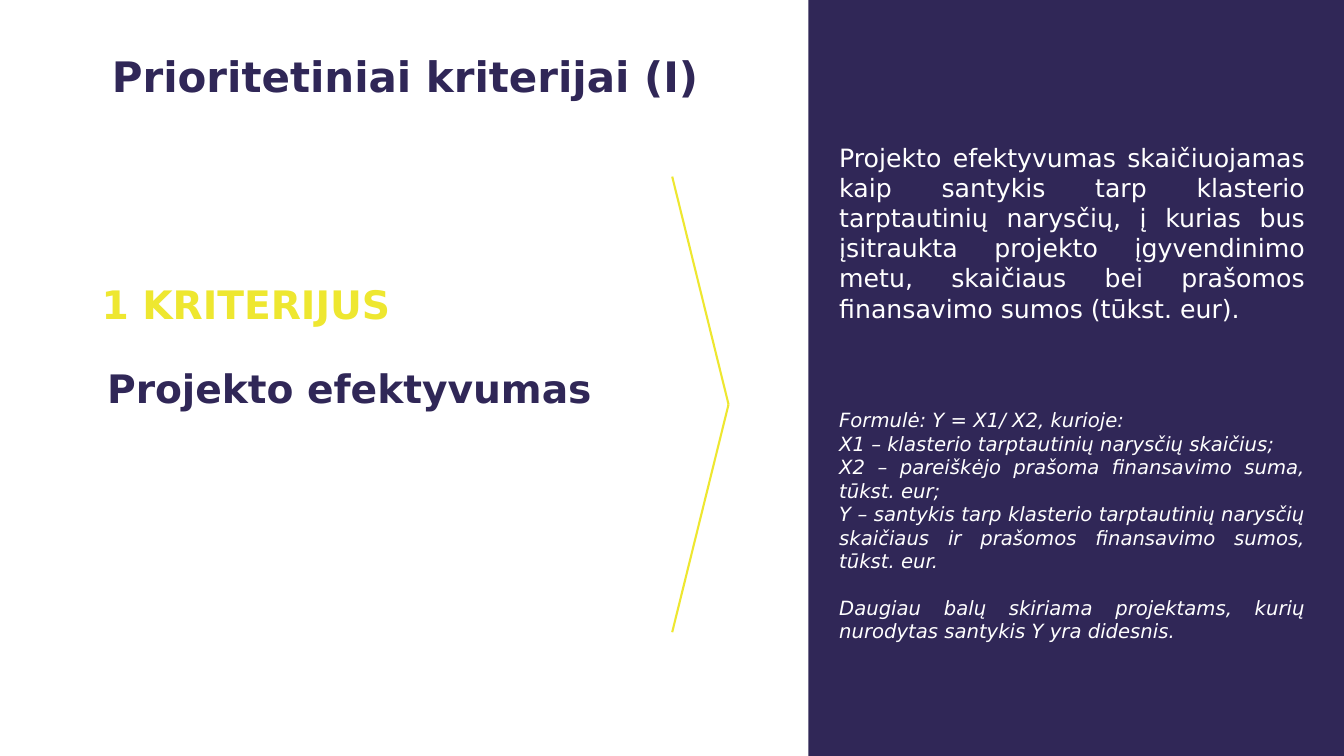
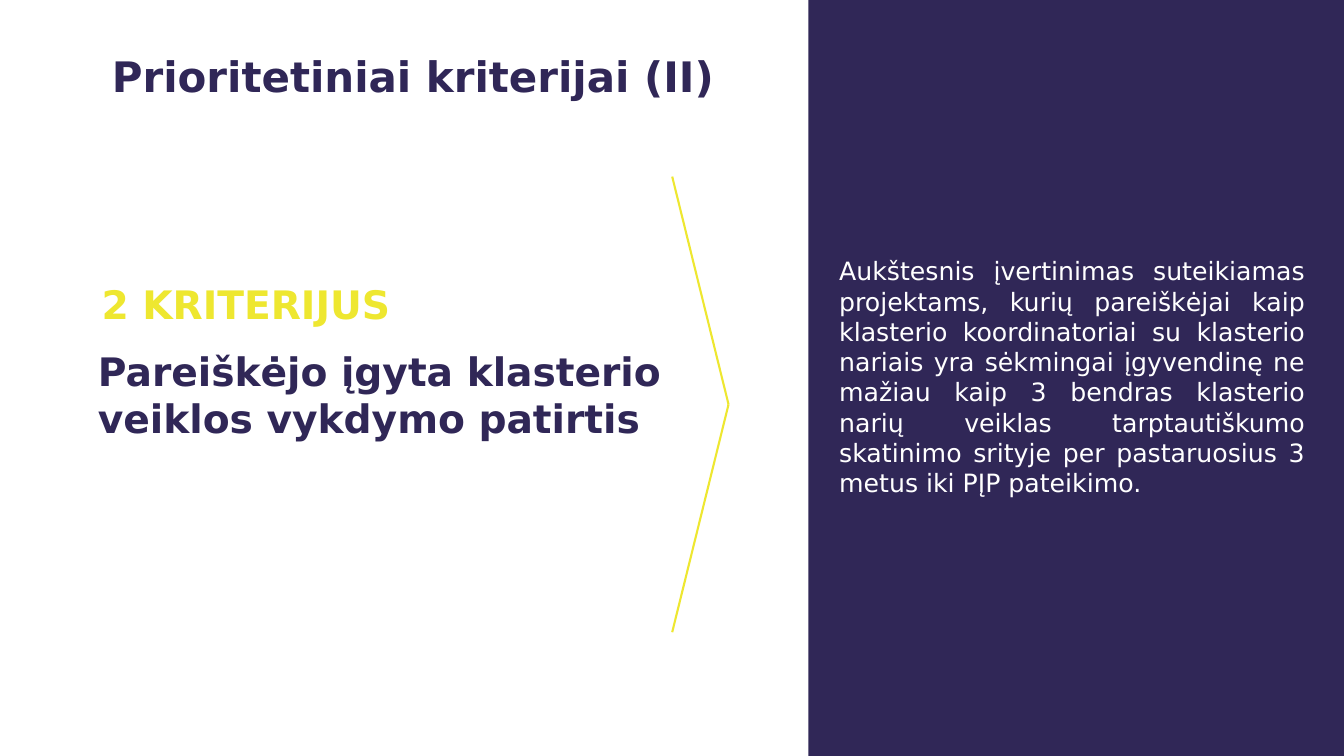
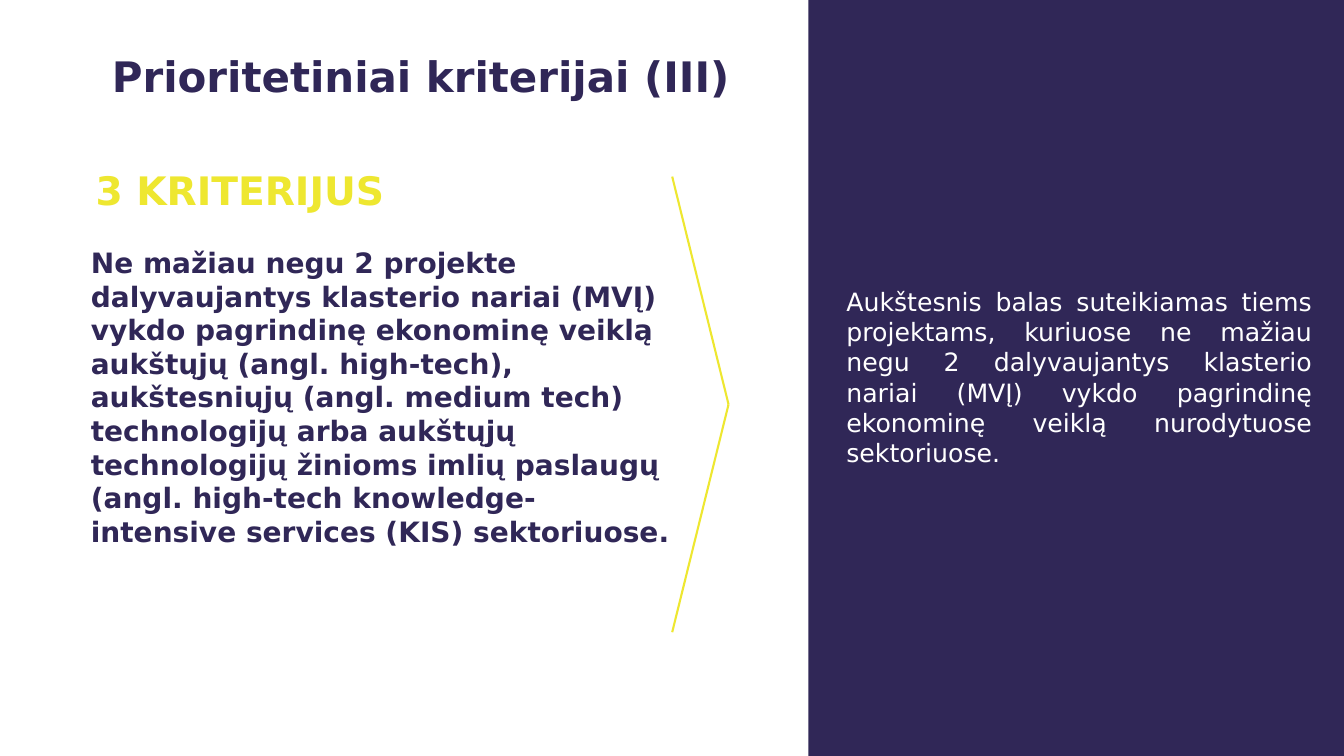
import pptx
import pptx.dml.color
import pptx.enum.shapes
import pptx.enum.text
import pptx.oxml.ns
import pptx.util
from lxml import etree

Cm = pptx.util.Cm
Pt = pptx.util.Pt
Rgb = pptx.dml.color.RGBColor
Anchor = pptx.enum.text.MSO_ANCHOR
Align = pptx.enum.text.PP_ALIGN
Kind = pptx.enum.shapes.MSO_SHAPE
Wire = pptx.enum.shapes.MSO_CONNECTOR


class Theme:
    """Colours, font, type sizes and line width."""
    navy = Rgb.from_string("302757")
    lime = Rgb.from_string("EEE730")
    white = Rgb.from_string("FFFFFF")
    font = "DejaVu Sans"
    title = 30
    head = 28
    claim = 20
    body = 18
    note = 14
    rule = 1.5


class Deck:
    """Holds the style and the current slide."""

    def __init__(self, theme):
        self.theme = theme
        self.prs = pptx.Presentation()
        self.prs.slide_width = Cm(33.87)
        self.prs.slide_height = Cm(19.05)
        self.slide = None

    def start(self, title):
        """New slide with the side band and the title."""
        self.slide = self.prs.slides.add_slide(self.prs.slide_layouts[6])
        self.rect((20.37, 0, 13.5, 19.05), self.theme.navy)
        frame = self.box((2.57, 0.79, 16.8, 2.24))
        frame.vertical_anchor = Anchor.MIDDLE
        self.say(frame, title, self.theme.title, self.theme.navy, bold=True)

    def rect(self, area, fill):
        shape = self.slide.shapes.add_shape(
            Kind.RECTANGLE, *[Cm(n) for n in area])
        shape.shadow.inherit = False
        shape.fill.solid()
        shape.fill.fore_color.rgb = fill
        shape.line.fill.background()
        return shape

    def box(self, area):
        frame = self.slide.shapes.add_textbox(
            *[Cm(n) for n in area]).text_frame
        frame.word_wrap = True
        return frame

    def say(self, frame, text, size, color, bold=None, italic=None,
            align=Align.LEFT, gap=0):
        """Add one paragraph; the first one fills the empty start."""
        para = frame.paragraphs[0] if not frame.text else frame.add_paragraph()
        para.text = text
        para.alignment = align
        if gap:
            para.space_before = Pt(gap)
        font = para.font
        font.name = self.theme.font
        font.size = Pt(size)
        font.color.rgb = color
        font.bold = bold
        font.italic = italic

    def claim(self, area, text, size):
        """White box that names the criterion."""
        shape = self.rect(area, self.theme.white)
        shape.line.color.rgb = self.theme.white
        shape.line.width = Pt(self.theme.rule)
        frame = shape.text_frame
        frame.word_wrap = True
        frame.vertical_anchor = Anchor.MIDDLE
        frame.margin_left = frame.margin_right = Cm(0.13)
        frame.margin_top = frame.margin_bottom = Cm(0.13)
        self.say(frame, text, size, self.theme.navy, bold=True)

    def arrow(self):
        """Tall chevron made of two lines that meet at the tip."""
        tip = (Cm(18.36), Cm(10.19))
        for end in (4.45, 15.93):
            line = self.slide.shapes.add_connector(
                Wire.STRAIGHT, Cm(16.94), Cm(end), *tip)
            line.line.color.rgb = self.theme.lime
            line.line.width = Pt(self.theme.rule)
            etree.SubElement(line._element.spPr,
                             pptx.oxml.ns.qn("a:effectLst"))

    def label(self, left, top, text):
        frame = self.box((left, top, 11.13, 1.45))
        self.say(frame, text, self.theme.head, self.theme.lime, bold=True)

    def detail(self, left, top, high, text, notes=()):
        """Justified text on the band; notes are (text, gap) pairs."""
        frame = self.box((left, top, 12.24, high))
        white = self.theme.white
        self.say(frame, text, self.theme.body, white, align=Align.JUSTIFY)
        for note, gap in notes:
            self.say(frame, note, self.theme.note, white, italic=True,
                     align=Align.JUSTIFY, gap=gap)


def main():
    theme = Theme()
    deck = Deck(theme)

    # Criterion 1
    deck.start("Prioritetiniai kriterijai (I)")
    deck.claim((2.57, 9.04, 16.03, 1.45), "Projekto efektyvumas", theme.head)
    deck.arrow()
    deck.detail(
        20.9, 3.45, 13.08,
        "Projekto efektyvumas skaičiuojamas kaip santykis tarp klasterio "
        "tarptautinių narysčių, į kurias bus įsitraukta projekto "
        "įgyvendinimo metu, skaičiaus bei prašomos finansavimo sumos "
        "(tūkst. eur).",
        [("Formulė: Y = X1/ X2, kurioje:", 60.5),
         ("X1 – klasterio tarptautinių narysčių skaičius;", 0),
         ("X2 – pareiškėjo prašoma finansavimo suma, tūkst. eur;", 0),
         ("Y – santykis tarp klasterio tarptautinių narysčių skaičiaus ir "
          "prašomos finansavimo sumos, tūkst. eur.", 0),
         ("Daugiau balų skiriama projektams, kurių nurodytas santykis Y yra "
          "didesnis.", 16.5)])
    deck.label(2.31, 6.93, "1 KRITERIJUS")

    # Criterion 2
    deck.start("Prioritetiniai kriterijai (II)")
    deck.claim((2.34, 8.61, 16.03, 2.64),
               "Pareiškėjo įgyta klasterio veiklos vykdymo patirtis",
               theme.head)
    deck.arrow()
    deck.detail(
        20.9, 6.32, 6.4,
        "Aukštesnis įvertinimas suteikiamas projektams, kurių pareiškėjai "
        "kaip klasterio koordinatoriai su klasterio nariais yra sėkmingai "
        "įgyvendinę ne mažiau kaip 3 bendras klasterio narių veiklas "
        "tarptautiškumo skatinimo srityje per pastaruosius 3 metus iki PĮP "
        "pateikimo.")
    deck.label(2.31, 6.93, "2 KRITERIJUS")

    # Criterion 3
    deck.start("Prioritetiniai kriterijai (III)")
    deck.claim(
        (2.16, 6.02, 14.94, 7.95),
        "Ne mažiau negu 2 projekte dalyvaujantys klasterio nariai (MVĮ) vykdo "
        "pagrindinę ekonominę veiklą aukštųjų (angl. high-tech), aukštesniųjų "
        "(angl. medium tech) technologijų arba aukštųjų technologijų žinioms "
        "imlių paslaugų (angl. high-tech knowledge-intensive services (KIS) "
        "sektoriuose.",
        theme.claim)
    deck.arrow()
    deck.detail(
        21.08, 7.09, 4.88,
        "Aukštesnis balas suteikiamas tiems projektams, kuriuose ne mažiau "
        "negu 2 dalyvaujantys klasterio nariai (MVĮ) vykdo pagrindinę "
        "ekonominę veiklą nurodytuose sektoriuose.")
    deck.label(2.16, 4.06, "3 KRITERIJUS")

    deck.prs.save("out.pptx")


if __name__ == "__main__":
    main()
